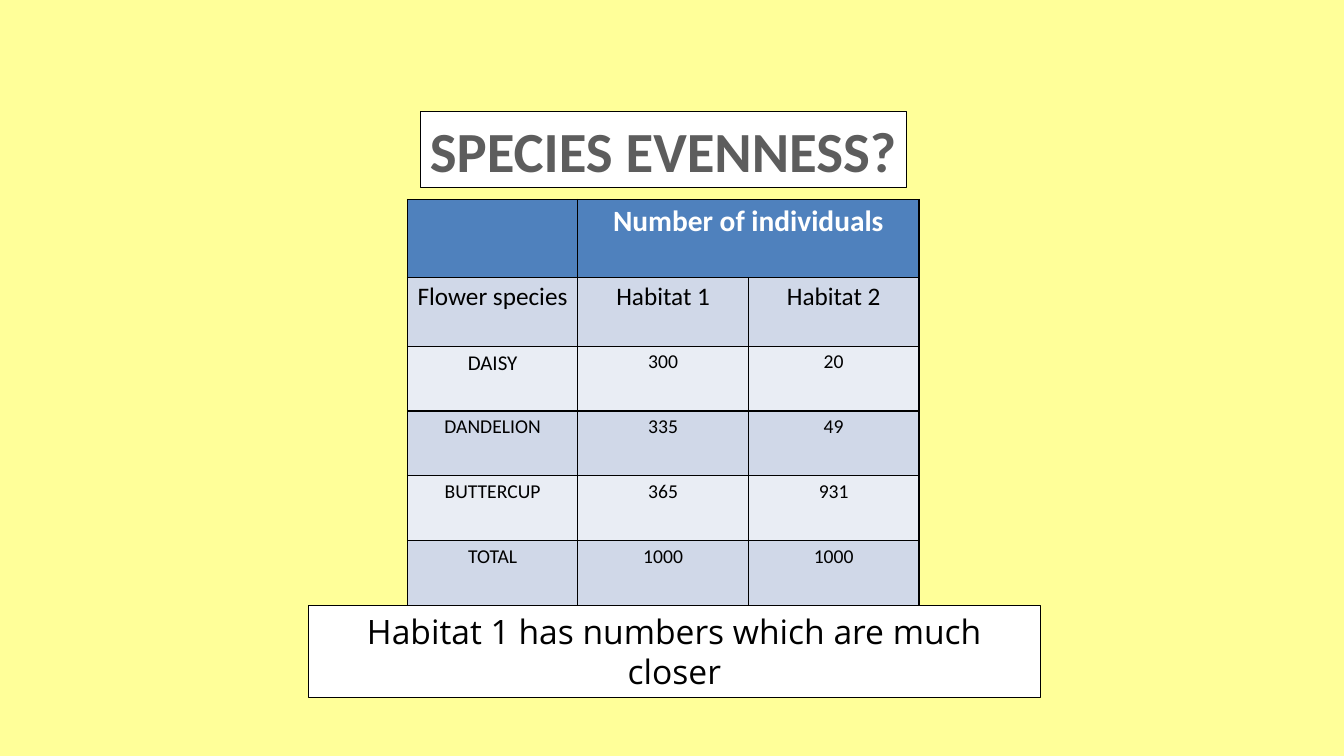
from pptx import Presentation
from pptx.dml.color import RGBColor
from pptx.enum.shapes import MSO_SHAPE
from pptx.enum.text import MSO_ANCHOR, MSO_AUTO_SIZE, PP_ALIGN
from pptx.oxml import parse_xml
from pptx.oxml.ns import nsdecls
from pptx.util import Inches, Pt

WIDE, HIGH = Inches(13.33), Inches(7.5)
INK = {
    "page": "FFFF99", "white": "FFFFFF", "black": "000000", "title": "5D5D5D",
    "head": "4F81BD", "dark": "D0D8E8", "light": "E9EDF4",
}
# Font formats
TITLE = {"name": "Calibri", "size": Pt(40.5), "bold": True}
NOTE = {"name": "Open Sans", "size": Pt(24), "bold": False}
HEAD = {"name": "Calibri", "size": Pt(21), "bold": True}
LABEL = {"name": "Calibri", "size": Pt(18), "bold": False}
DAISY = LABEL | {"size": Pt(15)}
COUNT = LABEL | {"size": Pt(14)}

# Table grid, in percent of the slide
LEFT, TOP, COL = 30.31, 26.4, 12.69
ROWS = [10.35, 9.05] + [8.58] * 4
DATA = [
    ["", "Number of individuals", ""],
    ["Flower species", "Habitat 1", "Habitat 2"],
    ["DAISY", "300", "20"],
    ["DANDELION", "335", "49"],
    ["BUTTERCUP", "365", "931"],
    ["TOTAL", "1000", "1000"],
]


def across(share):
    return round(WIDE * share / 100)


def down(share):
    return round(HIGH * share / 100)


def tint(name):
    return RGBColor.from_string(INK[name])


def paint(fill, name):
    fill.solid()
    fill.fore_color.rgb = tint(name)


def write(frame, text, form, ink):
    para = frame.paragraphs[0]
    para.alignment = PP_ALIGN.CENTER
    run = para.add_run()
    run.text = text
    for key, value in form.items():
        setattr(run.font, key, value)
    run.font.color.rgb = tint(ink)


def add_box(slide, area, text, form, ink, wrap):
    x, y, w, h = area
    box = slide.shapes.add_shape(
        MSO_SHAPE.RECTANGLE, across(x), down(y), across(w), down(h))
    box.shadow.inherit = False
    paint(box.fill, "white")
    paint(box.line.fill, "black")
    box.line.width = Pt(0.75)
    frame = box.text_frame
    side = Inches(0.1 if wrap else 0.07)
    edge = Inches(0.05 if wrap else 0.04)
    looks = {
        "word_wrap": wrap, "auto_size": MSO_AUTO_SIZE.SHAPE_TO_FIT_TEXT,
        "vertical_anchor": MSO_ANCHOR.TOP,
        "margin_left": side, "margin_right": side,
        "margin_top": edge, "margin_bottom": edge,
    }
    for key, value in looks.items():
        setattr(frame, key, value)
    write(frame, text, form, ink)


def edge_cell(cell):
    # Borders come before the fill in the cell's properties
    props = cell._tc.get_or_add_tcPr()
    for spot, side in enumerate(("lnL", "lnR", "lnT", "lnB")):
        props.insert(spot, parse_xml(
            f'<a:{side} {nsdecls("a")} w="12700"><a:solidFill>'
            f'<a:srgbClr val="{INK["black"]}"/></a:solidFill></a:{side}>'))


def add_grid(slide):
    cols = len(DATA[0])
    table = slide.shapes.add_table(
        len(DATA), cols, across(LEFT), down(TOP),
        across(COL * cols), down(sum(ROWS))).table
    for col in table.columns:
        col.width = across(COL)
    for r, (row, line) in enumerate(zip(table.rows, DATA)):
        row.height = down(ROWS[r])
        shade = "head" if r == 0 else "dark" if r % 2 else "light"
        for c, text in enumerate(line):
            cell = table.cell(r, c)
            cell.margin_left = cell.margin_right = Inches(0.08)
            cell.margin_top = cell.margin_bottom = Inches(0.04)
            paint(cell.fill, shade)
            edge_cell(cell)
            if text:
                form = {0: HEAD, 1: LABEL}.get(r, COUNT)
                if text == "DAISY":
                    form = DAISY
                write(cell.text_frame, text, form, "black" if r else "white")
    table.cell(0, 1).merge(table.cell(0, 2))


def main():
    deck = Presentation()
    deck.slide_width, deck.slide_height = WIDE, HIGH
    slide = deck.slides.add_slide(deck.slide_layouts[6])
    paint(slide.background.fill, "page")

    # Table, then title above and answer below
    add_grid(slide)
    add_box(slide, (31.28, 14.75, 36.15, 10.1),
            "SPECIES EVENNESS?", TITLE, "title", False)
    add_box(slide, (22.95, 80.1, 54.45, 12.15),
            "Habitat 1 has numbers which are much closer", NOTE, "black", True)
    deck.save("out.pptx")


if __name__ == "__main__":
    main()
